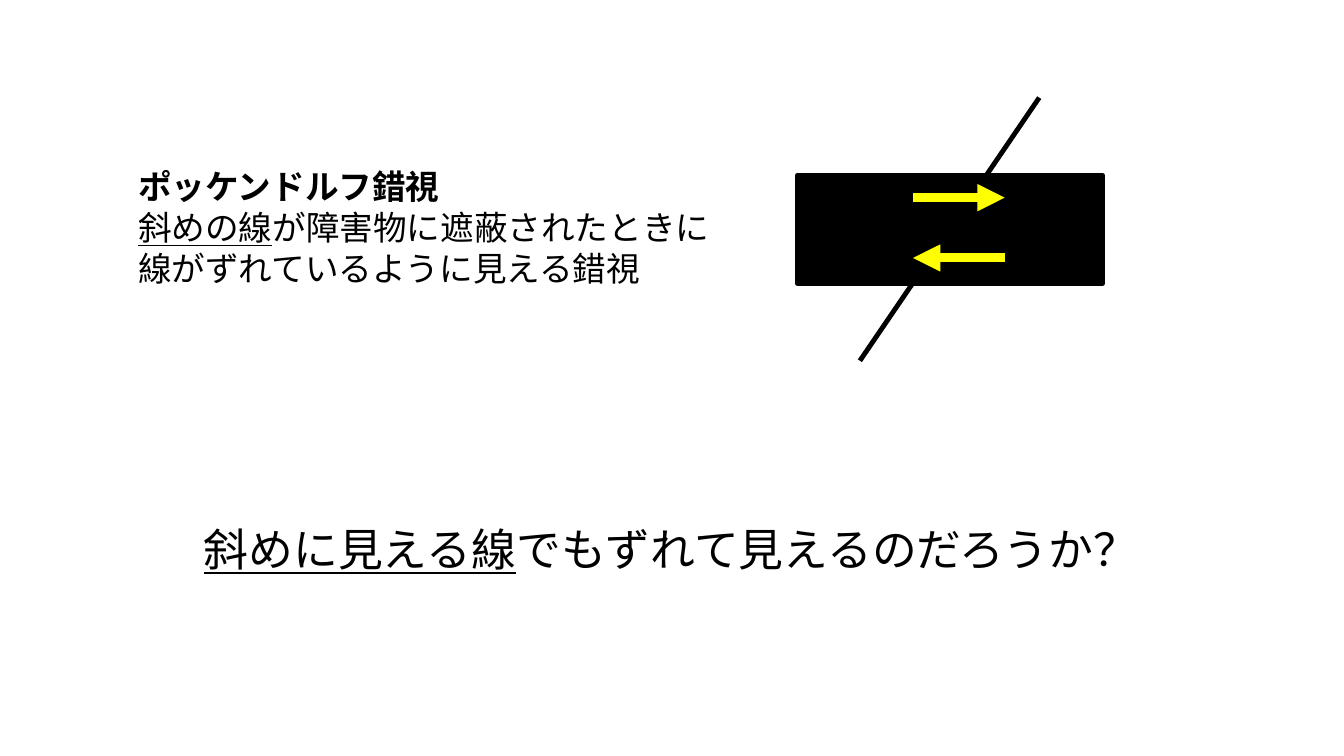
from pptx import Presentation
from pptx.dml.color import RGBColor
from pptx.enum.shapes import MSO_CONNECTOR as Connector, MSO_SHAPE as Shape
from pptx.enum.text import MSO_ANCHOR as Anchor, MSO_AUTO_SIZE as AutoSize, PP_ALIGN as Align
from pptx.oxml.ns import qn
from pptx.util import Cm, Pt
from lxml.etree import SubElement


def color(value):
    return RGBColor.from_string(value)


class IllusionSlide:
    font = "Noto Sans CJK JP"
    ink = "000000"
    shift = "FFFF00"
    stroke = 3.5

    def __init__(self, deck):
        self.slide = deck.slides.add_slide(deck.slide_layouts[5])
        self.shapes = self.slide.shapes

    def fill_text(self, frame, paragraphs, size, spacing, align):
        frame.word_wrap = True
        frame.auto_size = AutoSize.NONE
        frame.vertical_anchor = Anchor.TOP
        for index, runs in enumerate(paragraphs):
            paragraph = frame.add_paragraph() if index else frame.paragraphs[0]
            paragraph.alignment = align
            paragraph.line_spacing = Pt(spacing)
            for words, bold, underline in runs:
                run = paragraph.add_run()
                run.text = words
                run.font.size = Pt(size)
                run.font.name = self.font
                run.font.bold = bold
                run.font.underline = underline
                run.font.color.rgb = color(self.ink)
                SubElement(run.font._element, qn("a:ea"), typeface=self.font)

    def title(self, box, runs):
        question = self.shapes.title
        question.left, question.top, question.width, question.height = map(Cm, box)
        self.fill_text(question.text_frame, [runs], 32, 39, Align.CENTER)

    def text(self, box, paragraphs):
        explanation = self.shapes.add_textbox(*map(Cm, box))
        self.fill_text(explanation.text_frame, paragraphs, 24, 29, Align.LEFT)

    def group(self):
        return self.shapes.add_group_shape().shapes

    def line(self, group, start, end, hue, width, arrow=False):
        line = group.add_connector(Connector.STRAIGHT, *map(Cm, start + end))
        line.line.color.rgb = color(hue)
        line.line.width = Pt(width)
        properties = line._element.spPr
        if arrow:
            SubElement(properties.find(qn("a:ln")), qn("a:tailEnd"), type="triangle")
        SubElement(properties, qn("a:effectLst"))

    def block(self, group, box):
        obstacle = group.add_shape(Shape.RECTANGLE, *map(Cm, box))
        obstacle.shadow.inherit = False
        obstacle.fill.solid()
        obstacle.fill.fore_color.rgb = color(self.ink)
        obstacle.line.color.rgb = color(self.ink)
        obstacle.line.width = Pt(self.stroke)


def main():
    deck = Presentation()
    deck.slide_width, deck.slide_height = Cm(33.87), Cm(19.05)
    page = IllusionSlide(deck)

    page.title((3.58, 13, 26.67, 1.63), [
        ("斜めに見える線", False, True),
        ("でもずれて見えるのだろうか？", False, False),
    ])
    page.text((3.23, 4.06, 15.01, 3.33), [
        [("ポッケンドルフ錯視", True, False)],
        [("斜めの線", False, True),
         ("が障害物に遮蔽されたときに線がずれているように見える錯視", False, False)],
    ])

    figure = page.group()
    page.line(figure, (26.19, 2.46), (21.67, 9.09), page.ink, page.stroke)
    page.block(figure, (20.09, 4.42, 7.7, 2.72))

    arrows = page.group()
    left, right = 23.01, 25.32
    for start, end, height in ((left, right, 4.98), (right, left, 6.5)):
        page.line(arrows, (start, height), (end, height), page.shift, 6.5, arrow=True)

    deck.save("out.pptx")


if __name__ == "__main__":
    main()
